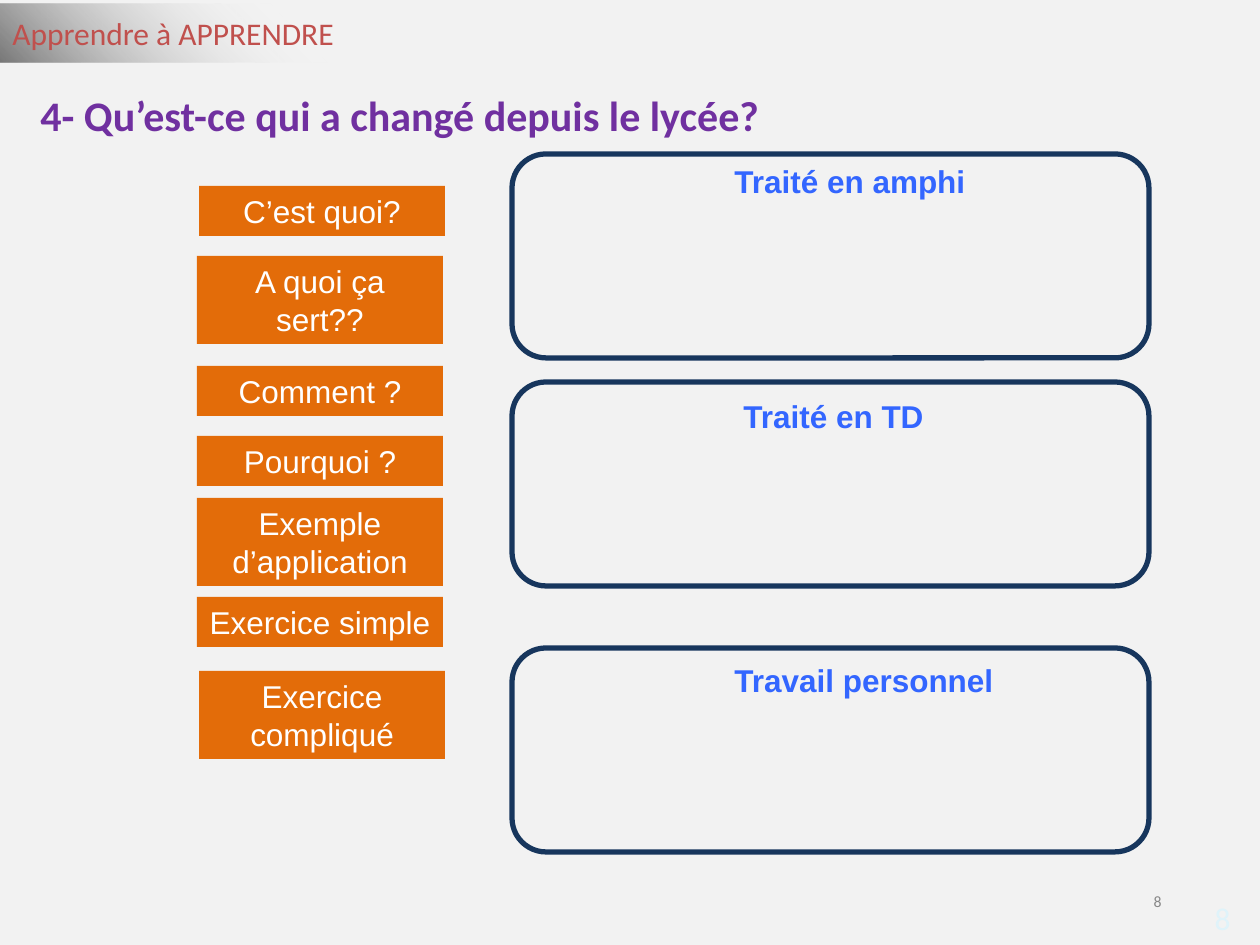
from dataclasses import dataclass

from lxml import etree
from pptx import Presentation
from pptx import util as u
from pptx.dml.color import RGBColor
from pptx.enum import shapes, text
from pptx.oxml import ns

LEFT, MID, RIGHT = text.PP_ALIGN.LEFT, text.PP_ALIGN.CENTER, text.PP_ALIGN.RIGHT
TOP, CENTER = text.MSO_ANCHOR.TOP, text.MSO_ANCHOR.MIDDLE
RECT, ROUND = shapes.MSO_SHAPE.RECTANGLE, shapes.MSO_SHAPE.ROUNDED_RECTANGLE


@dataclass(frozen=True)
class Theme:
    back: str = "F2F2F2"
    red: str = "C0504D"
    purple: str = "7030A0"
    orange: str = "E36C09"
    navy: str = "17365D"
    blue: str = "3366FF"
    white: str = "FFFFFF"
    grey: str = "888888"
    pale: str = "DFF3FA"
    head: str = "Calibri"
    body: str = "Arial"
    big: int = 24
    base: int = 18
    small: int = 9


T = Theme()


def px(n):
    return u.Emu(round(n * 914400 / 126))


def rgb(code):
    return RGBColor.from_string(code)


def write(shape, words, color, font=T.body, size=T.base, bold=False,
          align=LEFT, anchor=TOP, wrap=True):
    frame = shape.text_frame
    frame.word_wrap = wrap
    frame.vertical_anchor = anchor
    para = frame.paragraphs[0]
    para.alignment = align
    run = para.add_run()
    run.text = words
    run.font.name, run.font.size, run.font.bold = font, u.Pt(size), bold
    run.font.color.rgb = rgb(color)


def label(slide, box, words, color, **style):
    write(slide.shapes.add_textbox(*map(px, box)), words, color, **style)


def block(slide, kind, box, fill=None, line=None):
    shape = slide.shapes.add_shape(kind, *map(px, box))
    shape.shadow.inherit = False
    if fill:
        shape.fill.solid()
        shape.fill.fore_color.rgb = rgb(fill)
    else:
        shape.fill.background()
    if line:
        shape.line.color.rgb = rgb(line)
        shape.line.width = u.Pt(3)
    else:
        shape.line.fill.background()
    return shape


def glow(shape):
    """Fade from dark at the bottom left corner to clear."""
    stops = "".join(
        f'<a:gs pos="{pos}000"><a:srgbClr val="{color}">'
        f'<a:alpha val="{alpha}000"/></a:srgbClr></a:gs>'
        for pos, color, alpha in
        [(0, "010101", 51), (60, "FEFEFE", 0), (100, "FEFEFE", 0)])
    fill = etree.fromstring(
        f'<a:gradFill {ns.nsdecls("a")} rotWithShape="1"><a:gsLst>{stops}</a:gsLst>'
        '<a:path path="circle"><a:fillToRect t="100000" r="100000"/></a:path>'
        '</a:gradFill>')
    props = shape.element.spPr
    props.replace(props.find(ns.qn("a:noFill")), fill)


def header(slide, box):
    x, y, w, h = box
    band = block(slide, RECT, (x, y, 491, 58))
    glow(band)
    write(band, "Apprendre à APPRENDRE", T.red, font=T.head, anchor=CENTER)
    label(slide, (x + 28, y + 79, w - 28, 63),
          "4- Qu’est-ce qui a changé depuis le lycée?", T.purple,
          font=T.head, size=T.big, bold=True)


def topics(slide, box, items):
    """Stack of tags; each item gives its inset, drop, line count and words."""
    x, y, w, h = box
    for dx, dy, lines, words in items:
        tag = block(slide, RECT, (x + dx, y + dy, w, 12 + 38 * lines), T.orange)
        write(tag, words, T.white, align=MID)


def panel(slide, box, words, dx, dy):
    x, y, w, h = box
    block(slide, ROUND, box, line=T.navy)
    label(slide, (x + dx, y + dy, w - dx, 50), words, T.blue,
          bold=True, wrap=False)


def footer(slide, box):
    x, y, w, h = box
    label(slide, (x, y, 284, 50), "8", T.grey, font=T.head, size=T.small,
          align=RIGHT, anchor=CENTER)
    label(slide, (x + w - 70, y + 17, 70, 50), "8", T.pale, font=T.head,
          align=RIGHT, anchor=CENTER)


def main():
    deck = Presentation()
    deck.slide_width, deck.slide_height = px(1260), px(945)
    slide = deck.slides.add_slide(deck.slide_layouts[6])
    slide.background.fill.solid()
    slide.background.fill.fore_color.rgb = rgb(T.back)

    header(slide, (0, 4, 1149, 142))
    footer(slide, (890, 876, 353, 67))
    topics(slide, (197, 186, 246, 574), [
        (2, 0, 1, "C’est quoi?"),
        (0, 70, 2, "A quoi ça sert??"),
        (0, 180, 1, "Comment ?"),
        (0, 250, 1, "Pourquoi ?"),
        (0, 312, 2, "Exemple d’application"),
        (0, 411, 1, "Exercice simple"),
        (2, 485, 2, "Exercice compliqué"),
    ])
    for y, words, dx, dy in [
        (154, "Traité en amphi", 210, 2),
        (382, "Traité en TD", 219, 9),
        (648, "Travail personnel", 210, 7),
    ]:
        panel(slide, (512, y, 637, 204), words, dx, dy)

    deck.save("out.pptx")


if __name__ == "__main__":
    main()
